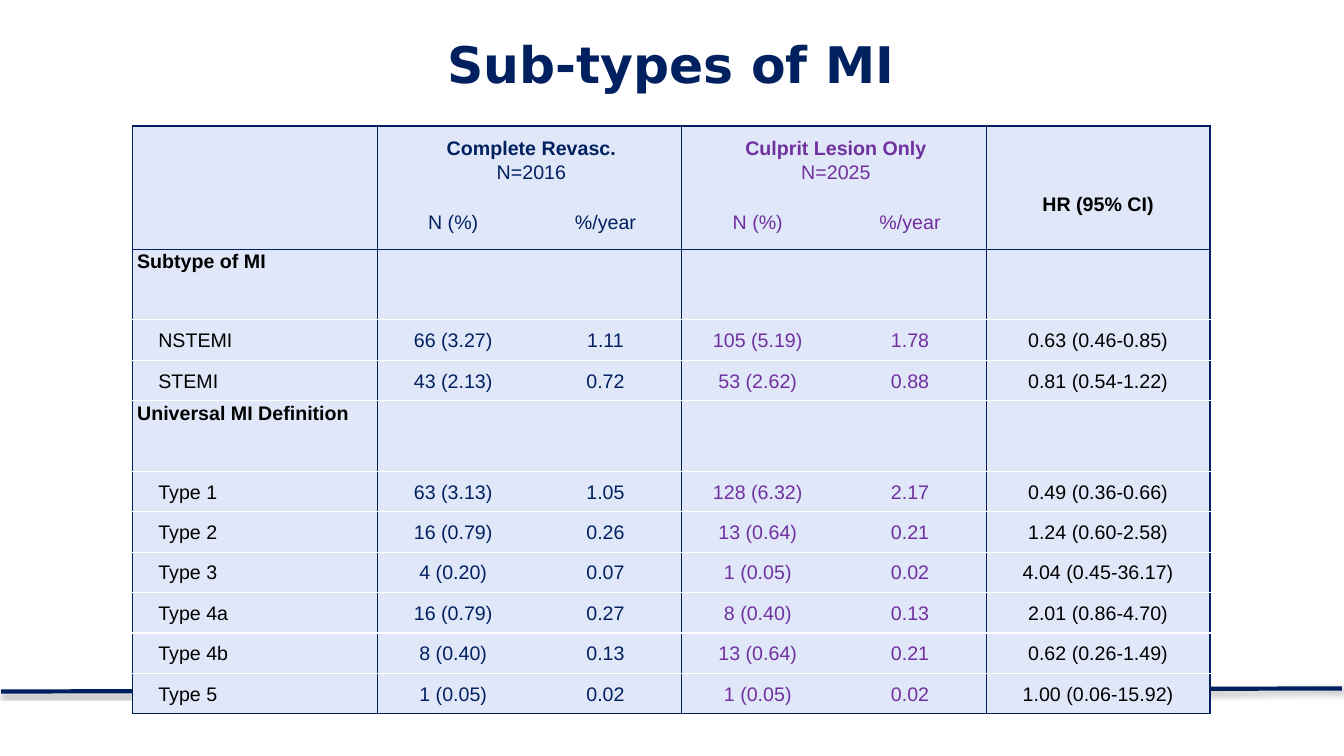
from lxml import etree
from pptx import Presentation
from pptx.dml.color import RGBColor
from pptx.enum.shapes import MSO_CONNECTOR
from pptx.enum.text import MSO_ANCHOR, PP_ALIGN
from pptx.oxml.ns import qn
from pptx.util import Inches, Pt

LEFT, CENTER = PP_ALIGN.LEFT, PP_ALIGN.CENTER
TOP, MIDDLE = MSO_ANCHOR.TOP, MSO_ANCHOR.MIDDLE
STRAIGHT = MSO_CONNECTOR.STRAIGHT

NAVY = RGBColor(0x00, 0x20, 0x60)
PURPLE = RGBColor(0x70, 0x30, 0xA0)
BLACK = RGBColor(0x00, 0x00, 0x00)
WHITE = RGBColor(0xFF, 0xFF, 0xFF)
PALE = RGBColor(0xE0, 0xE7, 0xF8)

WIDE, HIGH = Inches(13.33), Inches(7.5)

# Shares of the slide, in percent
EDGE, HEAD = 9.83, 16.67
COLS = [18.23] + [11.33] * 4 + [16.65]
HEADS = [8.93, 7.2]
PART, ITEM = 9.33, 5.35

INKS = [BLACK, NAVY, NAVY, PURPLE, PURPLE, BLACK]
RULED = {0, 2, 4, 5}  # columns with a navy line on the right

ROWS = [
    ["Subtype of MI"],
    ["NSTEMI", "66 (3.27)", "1.11", "105 (5.19)", "1.78", "0.63 (0.46-0.85)"],
    ["STEMI", "43 (2.13)", "0.72", "53 (2.62)", "0.88", "0.81 (0.54-1.22)"],
    ["Universal MI Definition"],
    ["Type 1", "63 (3.13)", "1.05", "128 (6.32)", "2.17", "0.49 (0.36-0.66)"],
    ["Type 2", "16 (0.79)", "0.26", "13 (0.64)", "0.21", "1.24 (0.60-2.58)"],
    ["Type 3", "4 (0.20)", "0.07", "1 (0.05)", "0.02", "4.04 (0.45-36.17)"],
    ["Type 4a", "16 (0.79)", "0.27", "8 (0.40)", "0.13", "2.01 (0.86-4.70)"],
    ["Type 4b", "8 (0.40)", "0.13", "13 (0.64)", "0.21", "0.62 (0.26-1.49)"],
    ["Type 5", "1 (0.05)", "0.02", "1 (0.05)", "0.02", "1.00 (0.06-15.92)"],
]


def across(share):
    return round(WIDE * share / 100)


def down(share):
    return round(HIGH * share / 100)


def write(frame, words, sub=None, size=14, font="Arial", ink=BLACK,
          bold=False, align=CENTER, space=1.07):
    """Write one paragraph; sub is a plain second line."""
    para = frame.paragraphs[0]
    para.alignment, para.line_spacing = align, space
    lines = [(words, bold)] + ([(sub, False)] if sub else [])
    for i, (line, heavy) in enumerate(lines):
        if i:
            para.add_line_break()
        run = para.add_run()
        run.text = line
        run.font.size, run.font.name = Pt(size), font
        run.font.color.rgb, run.font.bold = ink, heavy


def border(cell, sides):
    """Draw left, right, top and bottom lines; None means no line."""
    props = cell._tc.get_or_add_tcPr()
    for i, (side, ink) in enumerate(zip("LRTB", sides)):
        line = etree.Element(qn(f"a:ln{side}"), w=str(Pt(1)))
        if ink is None:
            etree.SubElement(line, qn("a:noFill"))
        else:
            fill = etree.SubElement(line, qn("a:solidFill"))
            etree.SubElement(fill, qn("a:srgbClr"), val=str(ink))
        props.insert(i, line)


def style(cell, row, col, last):
    """Fill the cell, and set its margins and the lines around it."""
    cell.fill.solid()
    cell.fill.fore_color.rgb = PALE
    cell.vertical_anchor = MIDDLE
    cell.margin_left = cell.margin_right = Inches(0.01)
    cell.margin_top = cell.margin_bottom = 0

    def rule(edge):
        if edge == 1:
            return None
        return NAVY if edge in (0, 2, last + 1) else WHITE

    left = NAVY if col == 0 or col - 1 in RULED else None
    right = NAVY if col in RULED else None
    border(cell, (left, right, rule(row), rule(row + 1)))


def grid(slide):
    tall = HEADS + [PART if len(row) == 1 else ITEM for row in ROWS]
    table = slide.shapes.add_table(
        len(tall), len(COLS), across(EDGE), down(HEAD),
        across(sum(COLS)), down(sum(tall))).table
    table.first_row = table.horz_banding = False
    for col, share in zip(table.columns, COLS):
        col.width = across(share)
    for row, share in zip(table.rows, tall):
        row.height = down(share)
    for r in range(len(tall)):
        for c in range(len(COLS)):
            style(table.cell(r, c), r, c, len(tall) - 1)
    return table


def header(table):
    groups = [(1, "Complete Revasc.", "N=2016"),
              (3, "Culprit Lesion Only", "N=2025")]
    for col, name, count in groups:
        top = table.cell(0, col)
        top.merge(table.cell(0, col + 1))
        top.margin_left = Inches(0.05)
        write(top.text_frame, name, sub=count, ink=INKS[col], bold=True)
        for i, unit in enumerate(["N (%)", "%/year"]):
            write(table.cell(1, col + i).text_frame, unit, ink=INKS[col])
    ratio = table.cell(0, 5)
    ratio.merge(table.cell(1, 5))
    ratio.margin_top = Inches(0.32)
    write(ratio.text_frame, "HR (95% CI)", bold=True)


def body(table):
    for r, row in enumerate(ROWS, len(HEADS)):
        part = len(row) == 1
        label = table.cell(r, 0)
        label.margin_left = Inches(0.05 if part else 0.26)
        label.vertical_anchor = TOP if part else MIDDLE
        for c, words in enumerate(row):
            write(table.cell(r, c).text_frame, words, ink=INKS[c],
                  bold=part, align=CENTER if c else LEFT)


def footer(slide):
    """Draw the navy rule with its soft shadow."""
    line = slide.shapes.add_connector(
        STRAIGHT, across(0.08), down(91.47), across(99.85), down(91.07))
    line.line.color.rgb, line.line.width = NAVY, Pt(3)
    effects = etree.SubElement(line._element.spPr, qn("a:effectLst"))
    shade = etree.SubElement(
        effects, qn("a:outerShdw"), blurRad=str(Pt(3.1)), dist=str(Pt(1.8)),
        dir="5400000", rotWithShape="0")
    tint = etree.SubElement(shade, qn("a:srgbClr"), val=str(BLACK))
    etree.SubElement(tint, qn("a:alpha"), val="35000")


def title(slide, words):
    box = slide.shapes.add_textbox(
        across(EDGE), down(4.4), across(sum(COLS)), down(6.67))
    frame = box.text_frame
    frame.word_wrap = True
    frame.margin_left = frame.margin_right = 0
    frame.margin_top = frame.margin_bottom = 0
    write(frame, words, size=36, font="DejaVu Sans", ink=NAVY, bold=True,
          space=1.0)


def main():
    deck = Presentation()
    deck.slide_width, deck.slide_height = WIDE, HIGH
    slide = deck.slides.add_slide(deck.slide_layouts[6])
    footer(slide)
    table = grid(slide)
    header(table)
    body(table)
    title(slide, "Sub-types of MI")
    deck.save("out.pptx")


if __name__ == "__main__":
    main()
